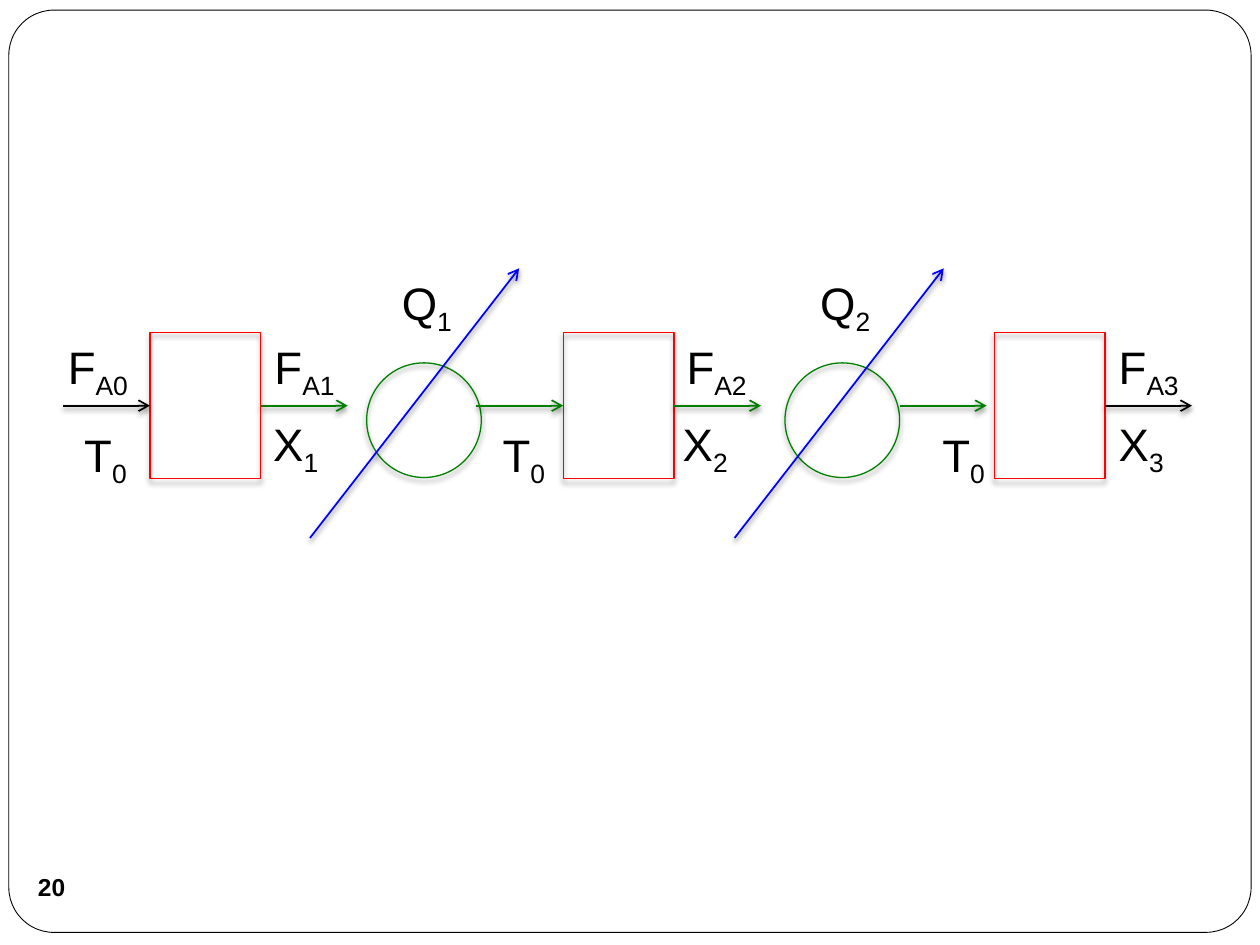
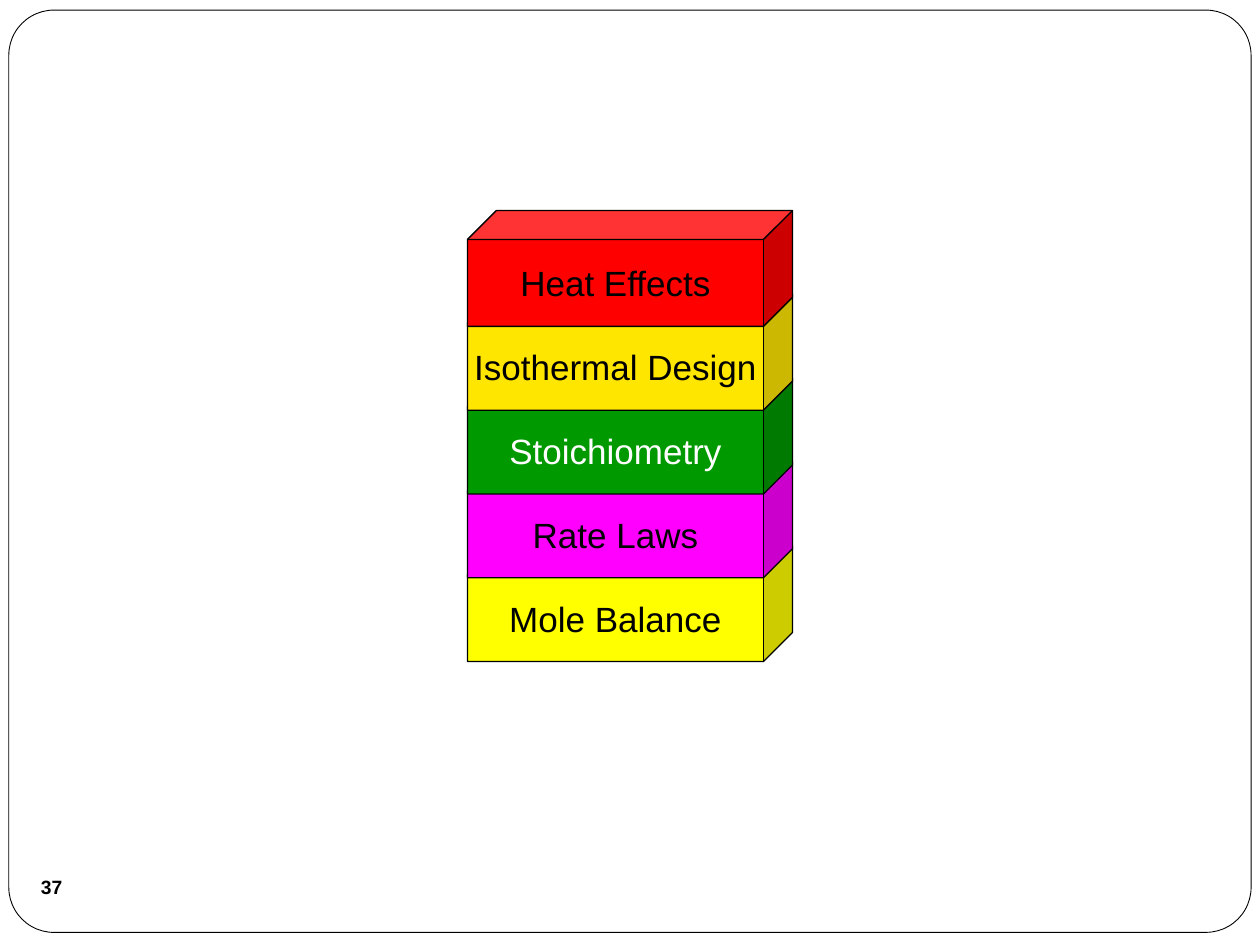
from lxml import etree
from pptx import Presentation
from pptx.dml.color import RGBColor
from pptx.enum.shapes import MSO_CONNECTOR, MSO_SHAPE
from pptx.enum.text import MSO_ANCHOR, PP_ALIGN
from pptx.oxml import parse_xml
from pptx.oxml.ns import qn
from pptx.util import Inches, Pt

RECT, OVAL, CUBE = MSO_SHAPE.RECTANGLE, MSO_SHAPE.OVAL, MSO_SHAPE.CUBE
ROUNDED, STRAIGHT = MSO_SHAPE.ROUNDED_RECTANGLE, MSO_CONNECTOR.STRAIGHT
MIDDLE, CENTER = MSO_ANCHOR.MIDDLE, PP_ALIGN.CENTER
LEFT_SIDE, RIGHT_SIDE = 1, 3

FONT = "Arial"
COLORS = {
    name: RGBColor.from_string(value)
    for name, value in {
        "black": "000000", "white": "FFFFFF", "red": "FF0000",
        "green": "008000", "blue": "0000FF", "yellow": "FFFF00",
        "magenta": "FF00FF", "leaf": "009900", "gold": "FFE600",
    }.items()
}
SHADOW = (
    '<a:effectLst xmlns:a="http://schemas.openxmlformats.org/drawingml/2006/main">'
    '<a:outerShdw blurRad="38100" dist="25400" dir="5400000" rotWithShape="0">'
    '<a:srgbClr val="000000"><a:alpha val="50000"/></a:srgbClr>'
    '</a:outerShdw></a:effectLst>'
)


def add_block(s, kind, box, fill=None, line=None, width=0.75, text="", size=20,
              color="black", bold=False):
    """Add a preset shape with optional fill, line and centred text."""
    sp = s.shapes.add_shape(kind, *[Inches(v) for v in box])
    sp.shadow.inherit = False
    if fill:
        sp.fill.solid()
        sp.fill.fore_color.rgb = COLORS[fill]
    else:
        sp.fill.background()
    if line:
        sp.line.color.rgb = COLORS[line]
        sp.line.width = Pt(width)
    else:
        sp.line.fill.background()
    if text:
        tf = sp.text_frame
        tf.word_wrap = False
        tf.vertical_anchor = MIDDLE
        p = tf.paragraphs[0]
        p.text = text
        p.alignment = CENTER
        p.font.name, p.font.size, p.font.bold = FONT, Pt(size), bold
        p.font.color.rgb = COLORS[color]
    return sp


def add_arrow(s, start, end, color):
    """Add a straight arrow with a soft shadow."""
    arrow = s.shapes.add_connector(STRAIGHT, *[Inches(v) for v in start + end])
    arrow.line.color.rgb = COLORS[color]
    arrow.line.width = Pt(1)
    spPr = arrow._element.spPr
    etree.SubElement(spPr.find(qn("a:ln")), qn("a:tailEnd"), type="arrow")
    spPr.append(parse_xml(SHADOW))
    return arrow


prs = Presentation()
prs.slide_width, prs.slide_height = Inches(10), Inches(7.5)

# Frame and slide number on every slide
slides = []
for number, size in [("20", 14), ("37", 11)]:
    s = prs.slides.add_slide(prs.slide_layouts[6])
    frame = add_block(s, ROUNDED, (0.07, 0.08, 9.86, 7.32), "white", "black", 0.5)
    frame.adjustments[0] = 0.049
    sp = add_block(s, OVAL, (0.16, 6.79, 0.5, 0.5), text=number, size=size, bold=True)
    tf = sp.text_frame
    tf.margin_left = tf.margin_right = tf.margin_top = tf.margin_bottom = 0
    slides.append(s)
flow, stack = slides

# Reactors and heat exchangers
FLOW_Y, REACTOR_W, REACTOR_H, EXCHANGER = 3.22, 0.88, 1.16, 0.91
reactors = [
    add_block(flow, RECT, (x, FLOW_Y - REACTOR_H / 2, REACTOR_W, REACTOR_H), line="red")
    for x in (1.19, 4.47, 7.89)
]
exchangers = [
    add_block(flow, OVAL, (x, 2.88, EXCHANGER, EXCHANGER), line="green")
    for x in (2.91, 6.23)
]
for sp in reactors + exchangers:
    spPr = sp._element.spPr
    spPr.remove(spPr.find(qn("a:effectLst")))
    spPr.append(parse_xml(SHADOW))

# Streams: start x, colour, reactor left, reactor entered
STREAM = 0.69
for x, color, source, target in [
    (0.5, "black", None, 0),
    (2.07, "green", 0, None),
    (3.78, "green", None, 1),
    (5.35, "green", 1, None),
    (7.14, "green", None, None),
    (8.77, "black", 2, None),
]:
    arrow = add_arrow(flow, (x, FLOW_Y), (x + STREAM, FLOW_Y), color)
    if source is not None:
        arrow.begin_connect(reactors[source], RIGHT_SIDE)
    if target is not None:
        arrow.end_connect(reactors[target], LEFT_SIDE)

# Heat flows through the exchangers
for x in (2.46, 5.83):
    add_arrow(flow, (x, 4.27), (x + 1.66, 2.13), "blue")

# Labels: symbol, subscript, left, top
for symbol, index, x, y in [
    ("F", "A0", 0.44, 2.64), ("F", "A1", 2.08, 2.64),
    ("F", "A2", 5.35, 2.64), ("F", "A3", 8.78, 2.64),
    ("X", "1", 2.07, 3.25), ("X", "2", 5.32, 3.25), ("X", "3", 8.78, 3.25),
    ("T", "0", 0.57, 3.34), ("T", "0", 3.89, 3.34), ("T", "0", 7.38, 3.34),
    ("Q", "1", 3.09, 2.13), ("Q", "2", 6.41, 2.13),
]:
    tf = flow.shapes.add_textbox(Inches(x), Inches(y), Inches(1.02), Inches(0.54)).text_frame
    tf.word_wrap = True
    p = tf.paragraphs[0]
    p.font.name, p.font.size = FONT, Pt(26)
    p.font.color.rgb = COLORS["black"]
    p.add_run().text = symbol
    r = p.add_run()
    r.text = index
    r.font._element.set("baseline", "-25000")

# Stack of topics, from the bottom up
for i, (topic, fill, color) in enumerate([
    ("Mole Balance", "yellow", "black"),
    ("Rate Laws", "magenta", "black"),
    ("Stoichiometry", "leaf", "white"),
    ("Isothermal Design", "gold", "black"),
    ("Heat Effects", "red", "black"),
]):
    top = 4.33 - i * 0.665
    cube = add_block(stack, CUBE, (3.71, top, 2.58, 0.92), fill, "black",
                     text=topic, color=color)
    cube.adjustments[0] = 0.25

prs.save("out.pptx")
